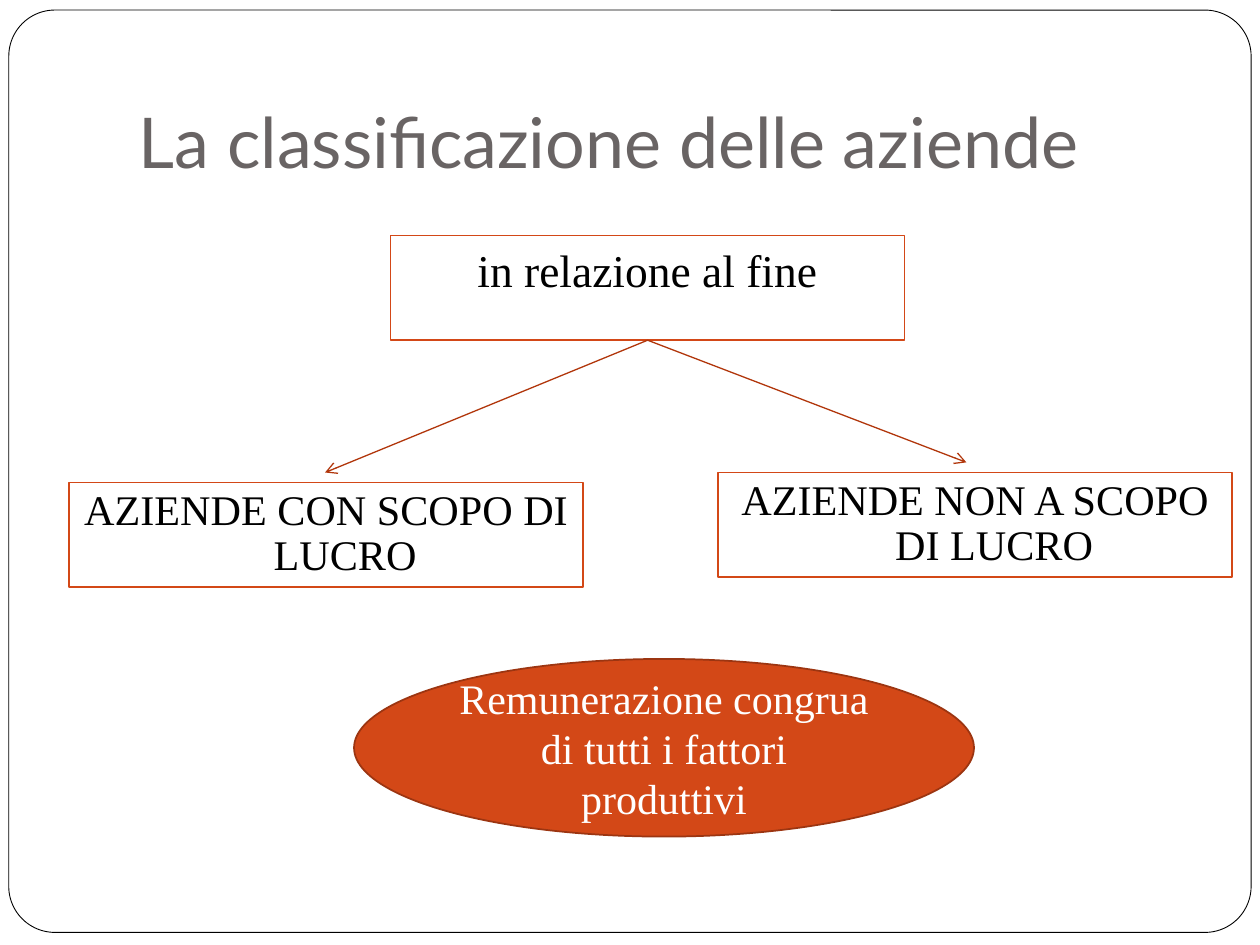
from lxml import etree
from pptx import Presentation
from pptx import util as u
from pptx.dml.color import RGBColor
from pptx.enum import shapes, text
from pptx.oxml.ns import qn

COLORS = {"paper": "FFFFFF", "ink": "000000", "title": "696464",
          "accent": "D34817", "arrow": "B1360B", "oval_edge": "9C3511"}
BODY_FONT = "Times New Roman"
BOX_SIZE = (4.08, 0.83)


def rgb(name):
    return RGBColor.from_string(COLORS[name])


def apply(target, values):
    for name, value in values.items():
        setattr(target, name, value)


class SlideBuilder:
    """Holds the shared style and the slide being filled."""

    def __init__(self, prs):
        self.s = prs.slides.add_slide(prs.slide_layouts[5])

    def add_text(self, sp, words, font, size, color, frame, para):
        tf = sp.text_frame
        apply(tf, {"word_wrap": True, **frame})
        p = tf.paragraphs[0]
        apply(p, para)
        r = p.add_run()
        r.text = words
        apply(r.font, {"name": font, "size": u.Pt(size)})
        r.font.color.rgb = rgb(color)
        return p

    def shape(self, kind, at, fill, line, width=1):
        sp = self.s.shapes.add_shape(kind, *map(u.Inches, at))
        sp.shadow.inherit = False
        sp.fill.solid()
        sp.fill.fore_color.rgb = rgb(fill)
        sp.line.color.rgb = rgb(line)
        sp.line.width = u.Pt(width)
        return sp

    def frame(self, at):
        """Rounded page border, placed behind everything else."""
        sp = self.shape(shapes.MSO_SHAPE.ROUNDED_RECTANGLE, at, "paper", "ink", 0.5)
        sp.adjustments[0] = 0.05
        self.s.shapes._spTree.insert(2, sp._element)

    def title(self, words, at):
        sp = self.s.shapes.title
        apply(sp, dict(zip(("left", "top", "width", "height"), map(u.Inches, at))))
        self.add_text(sp, words, "Lato", 40, "title",
                      {"vertical_anchor": text.MSO_ANCHOR.BOTTOM,
                       "auto_size": text.MSO_AUTO_SIZE.NONE,
                       "margin_bottom": u.Inches(0.1)},
                      {"alignment": text.PP_ALIGN.LEFT})

    def box(self, words, left, top, size, spacing):
        sp = self.shape(shapes.MSO_SHAPE.RECTANGLE, (left, top, *BOX_SIZE),
                        "paper", "accent")
        p = self.add_text(sp, words, BODY_FONT, size, "ink",
                          {"vertical_anchor": text.MSO_ANCHOR.TOP},
                          {"alignment": text.PP_ALIGN.CENTER,
                           "space_before": u.Pt(5.8), "line_spacing": spacing})
        pPr = p._p.get_or_add_pPr()
        pPr.set("marL", str(u.Inches(0.3)))
        pPr.set("indent", str(u.Inches(-0.3)))
        return sp

    def oval(self, words, at):
        sp = self.shape(shapes.MSO_SHAPE.OVAL, at, "accent", "oval_edge")
        self.add_text(sp, words, BODY_FONT, 24, "paper",
                      {"vertical_anchor": text.MSO_ANCHOR.MIDDLE},
                      {"alignment": text.PP_ALIGN.CENTER})

    def arrow(self, source, x, y):
        """Arrow from the bottom middle of source to the point x, y."""
        cxn = self.s.shapes.add_connector(
            shapes.MSO_CONNECTOR.STRAIGHT, 0, 0, u.Inches(x), u.Inches(y))
        cxn.begin_connect(source, 2)
        cxn.line.color.rgb = rgb("arrow")
        cxn.line.width = u.Pt(0.75)
        etree.SubElement(cxn.line._get_or_add_ln(), qn("a:tailEnd"), type="arrow")
        etree.SubElement(cxn._element.spPr, qn("a:effectLst"))


def main():
    prs = Presentation()
    prs.slide_width, prs.slide_height = u.Inches(10), u.Inches(7.5)
    b = SlideBuilder(prs)
    b.frame((0.07, 0.08, 9.86, 7.32))
    b.title("La classificazione delle aziende", (1, 0.3, 8.5, 1.25))
    b.box("AZIENDE CON SCOPO DI LUCRO", 0.55, 3.83, 24.1, 0.9)
    b.box("AZIENDE NON A SCOPO DI LUCRO", 5.7, 3.75, 24.1, 0.9)
    criterion = b.box("in relazione al fine", 3.1, 1.87, 26, 1.0)
    for x, y in ((2.58, 3.75), (7.67, 3.67)):
        b.arrow(criterion, x, y)
    b.oval("Remunerazione congrua di tutti i fattori produttivi",
           (2.81, 5.23, 4.92, 1.41))
    prs.save("out.pptx")


if __name__ == "__main__":
    main()
